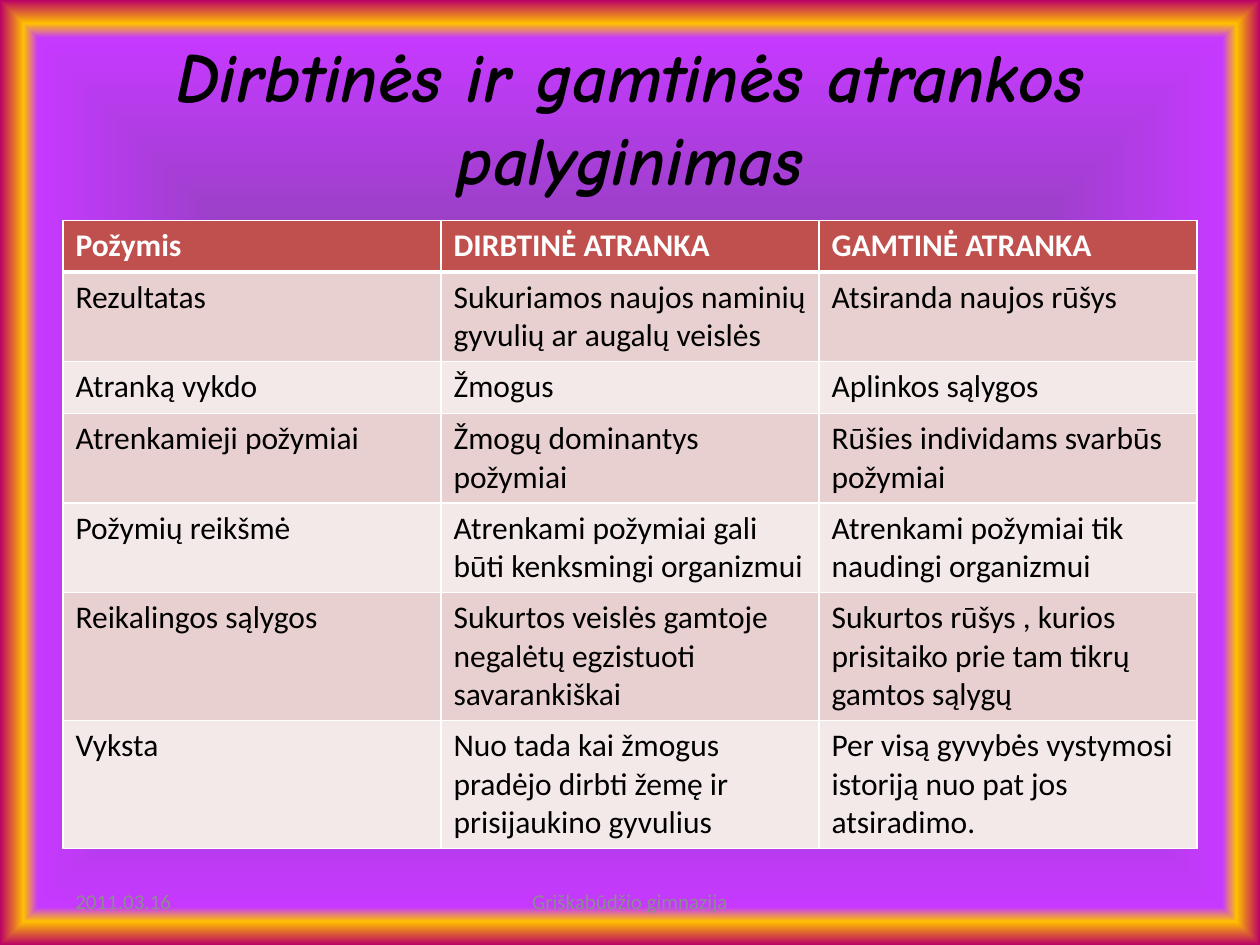
from pptx import Presentation
from pptx.dml.color import RGBColor
from pptx.enum.text import MSO_ANCHOR, MSO_AUTO_SIZE, PP_ALIGN
from pptx.oxml import parse_xml
from pptx.oxml.ns import nsdecls, qn
from pptx.util import Inches, Pt


class Theme:
    title_font, body_font = "Comic Neue", "Calibri"
    title_size, body_size, footer_size = 39.6, 18, 12
    text, header_text, footer_text = "000000", "FFFFFF", "8C8C8C"
    header_fill, band_fills, grid = "C0504D", ("E8D0D0", "F4E9E9"), "FFFFFF"
    # position %, colour, opacity %
    background = [(0, "604A7B", 100), (92, "C639FF", 50), (95, "FFC000", 100),
                  (100, "BA0066", 100), (100, "FF8200", 100)]


WIDTH, HEIGHT = 10, 7.5
MARGIN = 0.05 * WIDTH
CONTENT = WIDTH - 2 * MARGIN

ROWS = [
    ("Požymis", "DIRBTINĖ ATRANKA", "GAMTINĖ ATRANKA"),
    ("Rezultatas", "Sukuriamos naujos naminių gyvulių ar augalų veislės",
     "Atsiranda naujos rūšys"),
    ("Atranką vykdo", "Žmogus", "Aplinkos sąlygos"),
    ("Atrenkamieji požymiai", "Žmogų dominantys požymiai",
     "Rūšies individams svarbūs požymiai"),
    ("Požymių reikšmė", "Atrenkami požymiai gali būti kenksmingi organizmui",
     "Atrenkami požymiai tik naudingi organizmui"),
    ("Reikalingos sąlygos",
     "Sukurtos veislės gamtoje negalėtų egzistuoti savarankiškai",
     "Sukurtos rūšys , kurios prisitaiko prie tam tikrų gamtos sąlygų"),
    ("Vyksta",
     "Nuo tada kai žmogus pradėjo dirbti žemę ir prisijaukino gyvulius",
     "Per visą gyvybės vystymosi istoriją nuo pat jos atsiradimo."),
]


def write(tf, text, font, size, color, align=PP_ALIGN.LEFT, bold=False, italic=False):
    tf.text = text
    p = tf.paragraphs[0]
    p.alignment = align
    f = p.runs[0].font
    f.name, f.size, f.bold, f.italic = font, Pt(size), bold, italic
    f.color.rgb = RGBColor.from_string(color)


def paint_background(s):
    s.background.fill.solid()
    stops = "".join(
        f'<a:gs pos="{pos * 1000}"><a:srgbClr val="{color}">'
        f'<a:alpha val="{alpha * 1000}"/></a:srgbClr></a:gs>'
        for pos, color, alpha in Theme.background)
    bg = s.element.find(".//" + qn("p:bgPr"))
    bg.replace(bg[0], parse_xml(
        f'<a:gradFill {nsdecls("a")} rotWithShape="1"><a:gsLst>{stops}</a:gsLst>'
        '<a:path path="shape"><a:fillToRect l="50000" t="50000" r="50000" b="50000"/>'
        '</a:path></a:gradFill>'))


def add_title(s, box, text):
    sp = s.shapes.title
    sp.left, sp.top, sp.width, sp.height = map(Inches, box)
    tf = sp.text_frame
    tf.vertical_anchor = MSO_ANCHOR.MIDDLE
    tf.auto_size = MSO_AUTO_SIZE.NONE
    write(tf, text, Theme.title_font, Theme.title_size, Theme.text,
          PP_ALIGN.CENTER, bold=True, italic=True)


def set_borders(cell, bottom):
    tcPr = cell._tc.get_or_add_tcPr()
    widths = {"lnL": 1, "lnR": 1, "lnT": 1, "lnB": bottom}
    for i, (side, width) in enumerate(widths.items()):
        tcPr.insert(i, parse_xml(
            f'<a:{side} {nsdecls("a")} w="{Pt(width)}"><a:solidFill>'
            f'<a:srgbClr val="{Theme.grid}"/></a:solidFill></a:{side}>'))


def add_comparison(s, box, rows):
    # Rows start one line high and grow with their text
    table = s.shapes.add_table(len(rows), len(rows[0]), *map(Inches, box)).table
    for i, row in enumerate(rows):
        header = i == 0
        fill = Theme.header_fill if header else Theme.band_fills[(i - 1) % 2]
        color = Theme.header_text if header else Theme.text
        for j, text in enumerate(row):
            cell = table.cell(i, j)
            write(cell.text_frame, text, Theme.body_font, Theme.body_size, color,
                  bold=header)
            cell.fill.solid()
            cell.fill.fore_color.rgb = RGBColor.from_string(fill)
            # The rule under the header is thicker, on both sides of the edge
            set_borders(cell, 3 if header else 1)
            if i == 1:
                cell._tc.tcPr.find(qn("a:lnT")).set("w", str(Pt(3)))


def add_footer(s, box, text, align):
    tf = s.shapes.add_textbox(*map(Inches, box)).text_frame
    tf.word_wrap = True
    tf.vertical_anchor = MSO_ANCHOR.MIDDLE
    write(tf, text, Theme.body_font, Theme.footer_size, Theme.footer_text, align)


def main():
    prs = Presentation()
    prs.slide_width, prs.slide_height = Inches(WIDTH), Inches(HEIGHT)
    s = prs.slides.add_slide(prs.slide_layouts[5])
    paint_background(s)

    # Title
    add_title(s, (MARGIN, 0.04 * HEIGHT, CONTENT, HEIGHT / 6),
              "Dirbtinės ir gamtinės atrankos palyginimas")

    # Comparison table
    add_comparison(s, (MARGIN, 1.75, CONTENT, 0.41 * len(ROWS)), ROWS)

    # Date and centred footer
    top, height, center = 6.95, 0.4, 3.17
    add_footer(s, (MARGIN, top, 2.33, height), "2011.03.16", PP_ALIGN.LEFT)
    add_footer(s, ((WIDTH - center) / 2, top, center, height),
               "Griškabūdžio gimnazija", PP_ALIGN.CENTER)

    prs.save("out.pptx")


if __name__ == "__main__":
    main()
